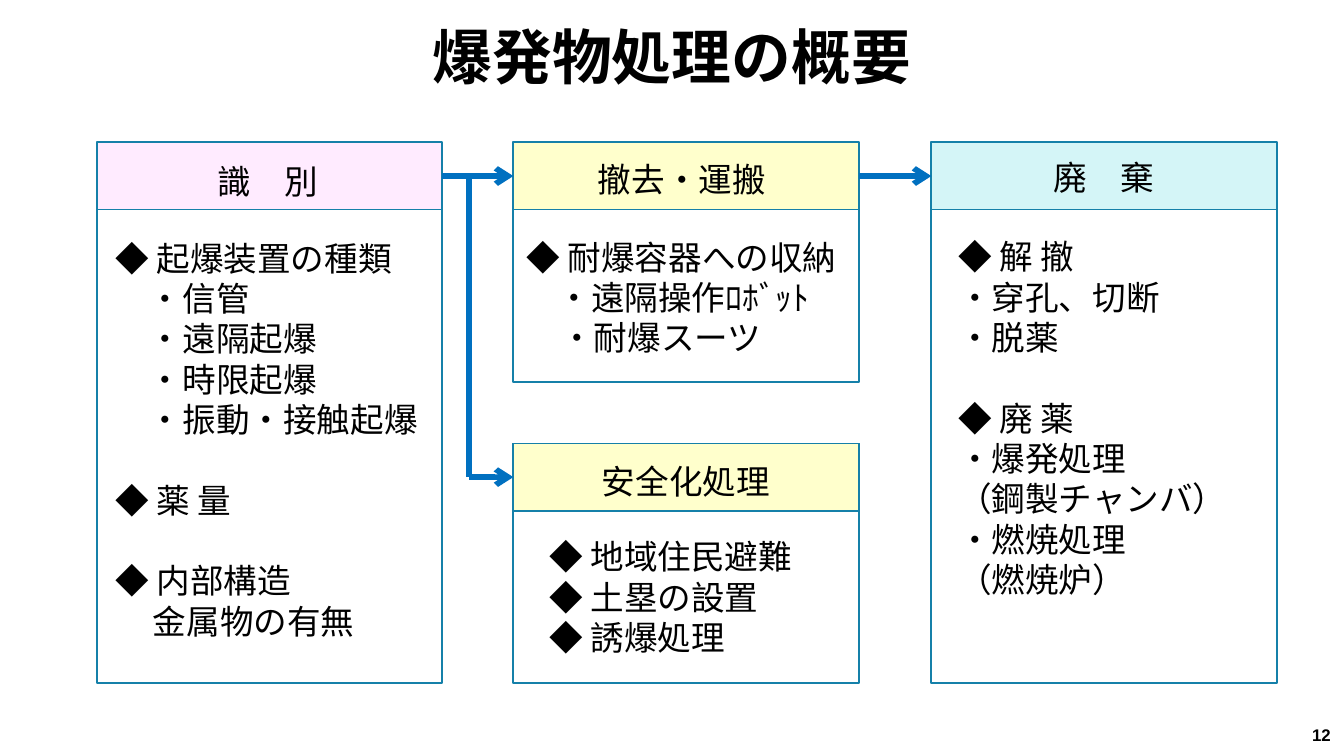
from dataclasses import dataclass

from lxml import etree
from pptx import Presentation
from pptx import util as u
from pptx.dml.color import RGBColor
from pptx.enum import shapes, text
from pptx.oxml import ns


@dataclass(frozen=True)
class Theme:
    """Colours, fonts and type sizes of the slide."""
    ink: str = "000000"
    border: str = "1580A9"
    arrow: str = "0070C0"
    pink: str = "FFEBFF"
    yellow: str = "FFFFCC"
    aqua: str = "D4F5F7"
    body_font: str = "Calibri"
    number_font: str = "Arial"
    title_size: int = 32
    body_size: int = 18
    number_size: int = 9
    border_width: int = 1
    arrow_width: int = 3


THEME = Theme()
COLUMNS, WIDTH = (0.72, 3.82, 6.93), 2.57
TOP, LOWER_TOP, HEADER_HEIGHT = 1.06, 3.3, 0.5
TALL, SHORT = 4.02, 1.78
BLANK_LINE = 21.6
BRANCH_X = 3.49


def style_span(span, size, font=THEME.body_font, bold=False):
    """Give a run its Latin and East Asian font, size, weight and colour."""
    span.font.size = u.Pt(size)
    span.font.bold = bold
    span.font.color.rgb = RGBColor.from_string(THEME.ink)
    span.font.name = font
    properties = span._r.get_or_add_rPr()
    for east_asian in properties.findall(ns.qn("a:ea")):
        properties.remove(east_asian)
    latin = properties.find(ns.qn("a:latin"))
    latin.addnext(etree.Element(ns.qn("a:ea"), typeface=font))


def add_title(page, wording):
    """Place and format the title placeholder."""
    title = page.shapes.title
    title.left, title.top = u.Inches(0.69), u.Inches(0.18)
    title.width, title.height = u.Inches(8.62), u.Inches(0.54)
    frame = title.text_frame
    frame.text = wording
    frame.auto_size = text.MSO_AUTO_SIZE.NONE
    frame.vertical_anchor = text.MSO_ANCHOR.MIDDLE
    para = frame.paragraphs[0]
    para.alignment = text.PP_ALIGN.CENTER
    para.line_spacing = 0.9
    style_span(para.runs[0], THEME.title_size, bold=True)


def add_rectangle(page, column, top, height, fill=None):
    """Add a bordered rectangle in a column of the flow."""
    box = page.shapes.add_shape(
        shapes.MSO_SHAPE.RECTANGLE, u.Inches(COLUMNS[column]),
        u.Inches(top), u.Inches(WIDTH), u.Inches(height))
    box.shadow.inherit = False
    if fill:
        box.fill.solid()
        box.fill.fore_color.rgb = RGBColor.from_string(fill)
    else:
        box.fill.background()
    box.line.color.rgb = RGBColor.from_string(THEME.border)
    box.line.width = u.Pt(THEME.border_width)
    return box


def add_text(page, left, top, width, height, lines):
    """Add a text box from (wording, indent in inches, gap before) lines."""
    box = page.shapes.add_textbox(
        u.Inches(left), u.Inches(top), u.Inches(width), u.Inches(height))
    frame = box.text_frame
    frame.word_wrap = True
    frame.text = "\n".join(wording for wording, _, _ in lines)
    for para, (_, indent, gap) in zip(frame.paragraphs, lines):
        para.space_before = u.Pt(gap)
        if indent:
            para._p.get_or_add_pPr().set("marL", str(u.Inches(indent)))
        style_span(para.runs[0], THEME.body_size)
    return box


def add_label(page, left, top, width, wording):
    """Add the wording of a header."""
    return add_text(page, left, top, width, 0.4, [(wording, 0, 0)])


def add_number(page, wording):
    """Add the page number in the lower right corner."""
    box = add_text(page, 9.41, 5.33, 0.59, 0.27, [(wording, 0, 0)])
    box.text_frame.vertical_anchor = text.MSO_ANCHOR.MIDDLE
    para = box.text_frame.paragraphs[0]
    para.alignment = text.PP_ALIGN.RIGHT
    style_span(para.runs[0], THEME.number_size, THEME.number_font, True)


def add_line(page, start, end, source=None, target=None, arrow=True):
    """Add a straight line, joined to header sides where these are given."""
    line = page.shapes.add_connector(
        shapes.MSO_CONNECTOR.STRAIGHT, *map(u.Inches, start + end))
    if source:
        line.begin_connect(source, 3)
    if target:
        line.end_connect(target, 1)
    line.line.color.rgb = RGBColor.from_string(THEME.arrow)
    line.line.width = u.Pt(THEME.arrow_width)
    if arrow:
        etree.SubElement(line.line._get_or_add_ln(), ns.qn("a:tailEnd"), type="arrow")
    etree.SubElement(line._element.spPr, ns.qn("a:effectLst"))


def add_flow(page, identify, remove, secure, dispose):
    """Link the headers with arrows and a branch."""
    upper, lower = TOP + HEADER_HEIGHT / 2, LOWER_TOP + HEADER_HEIGHT / 2
    left, middle, right = COLUMNS
    add_line(page, (left + WIDTH, upper), (middle, upper), identify, remove)
    add_line(page, (middle + WIDTH, upper), (right, upper), remove, dispose)
    add_line(page, (BRANCH_X, upper), (BRANCH_X, lower), arrow=False)
    add_line(page, (BRANCH_X, lower), (middle, lower), target=secure)


def main():
    """Build the slide and save it."""
    deck = Presentation()
    deck.slide_width = u.Inches(10)
    deck.slide_height = deck.slide_width * 9 // 16
    page = deck.slides.add_slide(deck.slide_layouts[5])
    add_title(page, "爆発物処理の概要")

    sections = [
        (0, TOP, TALL, THEME.pink),
        (1, TOP, SHORT, THEME.yellow),
        (1, LOWER_TOP, SHORT, THEME.yellow),
        (2, TOP, TALL, THEME.aqua),
    ]
    headers = [add_rectangle(page, column, top, HEADER_HEIGHT, fill)
               for column, top, _, fill in sections]
    for column, top, height, _ in sections:
        add_rectangle(page, column, top, height)
    add_flow(page, *headers)

    add_label(page, 1.52, 1.15, 0.96, "識　別")
    add_label(page, 4.35, 1.13, 1.5, "撤去・運搬")
    add_label(page, 4.38, 3.38, 1.5, "安全化処理")
    add_label(page, 7.74, 1.12, 1.12, "廃　棄")

    add_text(page, 0.76, 1.72, 2.47, 3.43, [
        ("◆ 起爆装置の種類", 0, 0),
        ("・信管", 0.25, 0),
        ("・遠隔起爆", 0.25, 0),
        ("・時限起爆", 0.25, 0),
        ("・振動・接触起爆", 0.25, 0),
        ("◆ 薬 量", 0, BLANK_LINE),
        ("◆ 内部構造", 0, BLANK_LINE),
        ("金属物の有無", 0.28, 0),
    ])
    add_text(page, 3.82, 1.71, 2.55, 1.01, [
        ("◆ 耐爆容器への収納", 0, 0),
        ("・遠隔操作ﾛﾎﾞｯﾄ", 0.23, 0),
        ("・耐爆スーツ", 0.25, 0),
    ])
    add_text(page, 3.99, 3.94, 2.03, 1.01, [
        ("◆ 地域住民避難", 0, 0),
        ("◆ 土塁の設置", 0, 0),
        ("◆ 誘爆処理", 0, 0),
    ])
    add_text(page, 7.03, 1.71, 2.22, 3.43, [
        ("◆ 解 撤", 0, 0),
        ("・穿孔、切断", 0, 0),
        ("・脱薬", 0, 0),
        ("◆ 廃 薬", 0, BLANK_LINE),
        ("・爆発処理", 0, 0),
        ("（鋼製チャンバ）", 0, 0),
        ("・燃焼処理", 0, 0),
        ("（燃焼炉）", 0, 0),
    ])
    add_number(page, "12")
    deck.save("out.pptx")


if __name__ == "__main__":
    main()
